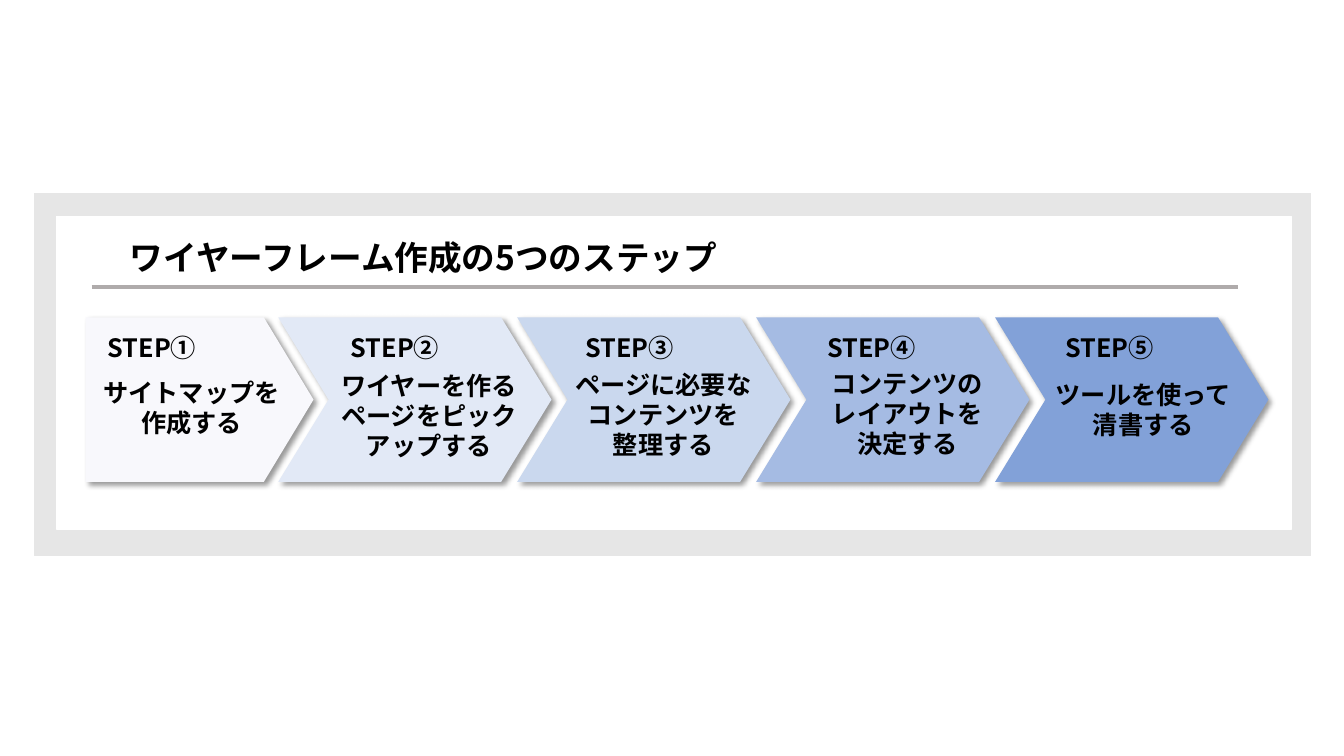
"""Builds a slide with the five steps of making a wireframe."""
import dataclasses

import lxml.etree
import pptx
import pptx.dml.color
import pptx.enum.shapes
import pptx.enum.text
import pptx.oxml
import pptx.oxml.ns
import pptx.util

Inches = pptx.util.Inches
Pt = pptx.util.Pt
Shape = pptx.enum.shapes.MSO_SHAPE
Align = pptx.enum.text.PP_ALIGN
qn = pptx.oxml.ns.qn


@dataclasses.dataclass(frozen=True)
class Theme:
    """Colours, fonts and type sizes of the slide."""
    frame: str = "E6E6E6"
    panel: str = "FFFFFF"
    rule: str = "AFABAB"
    ink: str = "000000"
    steps: tuple = ("F8F8FC", "E2E9F6", "CAD8EE", "A5BBE3", "82A1D8")
    heading_font: str = "Noto Sans CJK JP"
    body_font: str = "Arial"
    title_size: int = 24
    step_size: int = 18


class Deck:
    """Draws styled elements on the current slide."""

    def __init__(self, theme):
        self.theme = theme
        self.presentation = pptx.Presentation()
        self.presentation.slide_width = Inches(13.33)
        self.presentation.slide_height = Inches(7.5)
        self.slide = self.presentation.slides.add_slide(self.presentation.slide_layouts[6])

    def color(self, value):
        """Turns a hex value into a colour."""
        return pptx.dml.color.RGBColor.from_string(value)

    def block(self, kind, left, top, width, height, fill):
        """Adds a filled shape without outline or shadow."""
        block = self.slide.shapes.add_shape(
            kind, Inches(left), Inches(top), Inches(width), Inches(height))
        block.shadow.inherit = False
        block.fill.solid()
        block.fill.fore_color.rgb = self.color(fill)
        block.line.fill.background()
        return block

    def panel(self, left, top, width, height, fill):
        """Adds a rectangle outlined in its own colour."""
        panel = self.block(Shape.RECTANGLE, left, top, width, height, fill)
        panel.line.color.rgb = self.color(fill)
        panel.line.width = Pt(1)

    def arrow(self, kind, left, width, point, fill):
        """Adds a step arrow with a soft shadow at its lower right."""
        arrow = self.block(kind, left, 3.15, width, 1.63, fill)
        arrow.adjustments[0] = point
        effects = arrow._element.spPr.find(qn("a:effectLst"))
        shadow = lxml.etree.SubElement(
            effects, qn("a:outerShdw"), blurRad=str(Pt(4)), dist=str(Pt(3)),
            dir=str(45 * 60000), algn="tl", rotWithShape="0")
        tint = lxml.etree.SubElement(shadow, qn("a:srgbClr"), val=self.theme.ink)
        lxml.etree.SubElement(tint, qn("a:alpha"), val="40000")

    def rule(self, left, right, top):
        """Adds a horizontal line."""
        rule = self.slide.shapes.add_connector(
            pptx.enum.shapes.MSO_CONNECTOR.STRAIGHT,
            Inches(left), Inches(top), Inches(right), Inches(top))
        rule.line.color.rgb = self.color(self.theme.rule)
        rule.line.width = Pt(3)
        lxml.etree.SubElement(rule._element.spPr, qn("a:effectLst"))

    def text(self, words, left, top, width, height, size, font, align=Align.LEFT):
        """Adds a bold text box with one paragraph per line of words."""
        box = self.slide.shapes.add_textbox(
            Inches(left), Inches(top), Inches(width), Inches(height))
        frame = box.text_frame
        frame.word_wrap = True
        frame.auto_size = pptx.enum.text.MSO_AUTO_SIZE.SHAPE_TO_FIT_TEXT
        frame.text = words
        for paragraph in frame.paragraphs:
            paragraph.alignment = align
            paragraph.font.size = Pt(size)
            paragraph.font.bold = True
            paragraph.font.color.rgb = self.color(self.theme.ink)
            paragraph.font.name = font
            properties = paragraph._p.pPr.find(qn("a:defRPr"))
            lxml.etree.SubElement(properties, qn("a:ea"), typeface=self.theme.heading_font)


def main():
    """Builds and saves the slide."""
    theme = Theme()
    deck = Deck(theme)
    deck.panel(0.34, 1.92, 12.66, 3.59, theme.frame)
    deck.panel(0.56, 2.15, 12.25, 3.1, theme.panel)
    deck.rule(0.91, 12.28, 2.85)
    deck.text("ワイヤーフレーム作成の5つのステップ", 1.19, 2.3, 9.86, 0.5,
              theme.title_size, theme.heading_font)

    deck.arrow(Shape.PENTAGON, 0.85, 2.26, 0.302, theme.steps[0])
    for index, fill in enumerate(theme.steps[1:]):
        deck.arrow(Shape.CHEVRON, 2.76 + 2.37 * index, 2.71, 0.306, fill)

    steps = [
        ("STEP①", 0.97, "サイトマップを作成する", 0.91, 3.69, 1.98, 0.71),
        ("STEP②", 3.38, "ワイヤーを作るページをピックアップする", 3.27, 3.62, 1.97, 1.01),
        ("STEP③", 5.71, "ページに必要なコンテンツを\n整理する", 5.5, 3.61, 2.16, 1.01),
        ("STEP④", 8.11, "コンテンツのレイアウトを決定する", 8.04, 3.6, 1.92, 1.01),
        ("STEP⑤", 10.47, "ツールを使って\n清書する", 10.24, 3.71, 2.2, 0.71),
    ]
    for label, label_left, task, left, top, width, height in steps:
        deck.text(label, label_left, 3.25, 1.64, 0.4, theme.step_size, theme.heading_font)
        deck.text(task, left, top, width, height,
                  theme.step_size, theme.body_font, Align.CENTER)

    deck.presentation.save("out.pptx")


if __name__ == "__main__":
    main()
